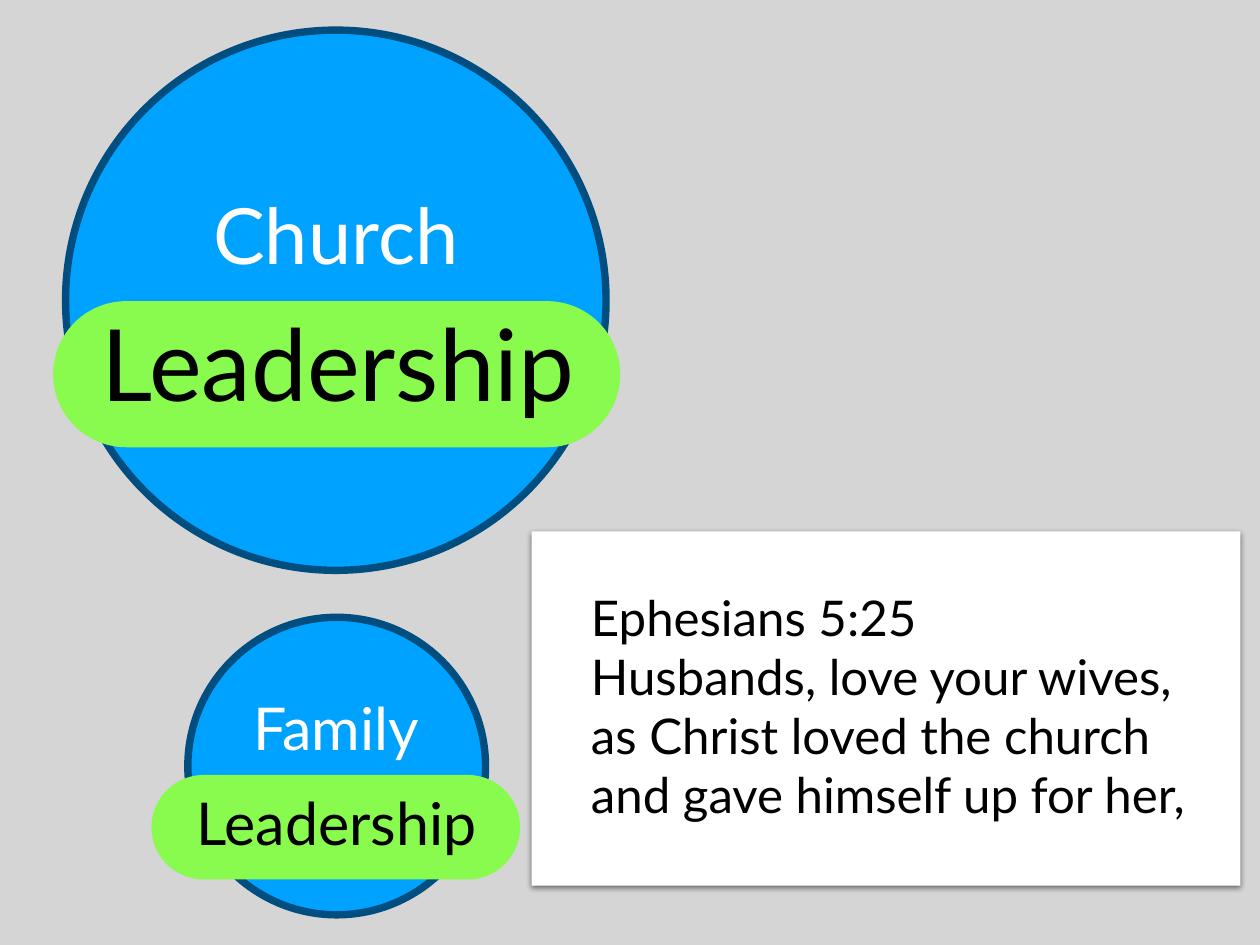
from math import cos, radians, sin

from lxml.etree import fromstring
from pptx import Presentation
from pptx.dml.color import RGBColor
from pptx.enum.shapes import MSO_SHAPE as Shape
from pptx.enum.text import MSO_ANCHOR as Anchor, MSO_AUTO_SIZE as AutoSize, PP_ALIGN as Align
from pptx.util import Inches, Pt

FONT = "Lato"
GREY, BLUE, NAVY, GREEN = "D5D5D5", "00A2FF", "004D80", "89FA4E"
WHITE, BLACK = "FFFFFF", "000000"

# Boxes are left, top, width, height in inches
CIRCLES = [(0.74, 0.34, 6.1, 6.1), (2.12, 6.97, 3.36, 3.36)]
PILLS = [(0.6, 3.4, 6.4, 1.65), (1.71, 8.75, 4.16, 1.18)]
LABELS = [
    ("Church", (2.26, 1.99, 3.06, 1.29), 63, WHITE),
    ("Family", (2.73, 7.7, 2.13, 1.01), 48, WHITE),
    ("Leadership", (0.84, 3.26, 5.95, 1.65), 81, BLACK),
    ("Leadership", (2.01, 8.78, 3.58, 1.01), 48, BLACK),
]
BUBBLE = (6.05, 5.67, 7.77, 4.58)
BUBBLE_RADIUS = 0.68
BUBBLE_TAIL = [(6.05, 9.46), (5.6, 9.27), (6.05, 9.08)]
VERSE_BOX = (6.61, 6, 6.91, 3.93)
VERSE = [
    "Ephesians 5:25",
    "Husbands, love your wives, as Christ loved the church and gave himself up for her,",
]
SHADOW = """<a:effectLst xmlns:a="http://schemas.openxmlformats.org/drawingml/2006/main">
<a:outerShdw blurRad="63500" dist="25400" dir="5400000" rotWithShape="0">
<a:srgbClr val="000000"><a:alpha val="50000"/></a:srgbClr></a:outerShdw></a:effectLst>"""


def color(value):
    return RGBColor.from_string(value)


def inches(box):
    return [Inches(length) for length in box]


def paint(shape, fill, line=None):
    shape.shadow.inherit = False
    shape.fill.solid()
    shape.fill.fore_color.rgb = color(fill)
    if line:
        shape.line.color.rgb = color(line)
        shape.line.width = Pt(6)
    else:
        shape.line.fill.background()


def add_text(page, lines, box, size, text_color, align, wrap):
    text_box = page.shapes.add_textbox(*inches(box))
    frame = text_box.text_frame
    frame.text = "\n".join(lines)
    frame.word_wrap = wrap
    frame.auto_size = AutoSize.SHAPE_TO_FIT_TEXT
    frame.vertical_anchor = Anchor.MIDDLE
    frame.margin_left = frame.margin_right = Inches(0.06)
    frame.margin_top = frame.margin_bottom = Inches(0.06)
    for para in frame.paragraphs:
        para.alignment = align
        for run in para.runs:
            run.font.name = FONT
            run.font.size = Pt(size)
            run.font.color.rgb = color(text_color)


def bubble_outline():
    """Points clockwise from the top left corner, then the tail on the left side."""
    left, top, width, height = BUBBLE
    radius = BUBBLE_RADIUS
    near_x, far_x = left + radius, left + width - radius
    near_y, far_y = top + radius, top + height - radius
    centers = [(near_x, near_y), (far_x, near_y), (far_x, far_y), (near_x, far_y)]
    points = []
    for corner, (x, y) in enumerate(centers):
        for step in range(0, 91, 5):
            angle = radians(180 + 90 * corner + step)
            points.append((x + radius * cos(angle), y + radius * sin(angle)))
    return points + BUBBLE_TAIL


def add_bubble(page):
    start, *rest = bubble_outline()
    builder = page.shapes.build_freeform(*start, scale=Inches(1))
    builder.add_line_segments(rest, close=True)
    bubble = builder.convert_to_shape()
    paint(bubble, WHITE)
    properties = bubble.element.spPr
    plain_effects = properties.find("{*}effectLst")
    properties.replace(plain_effects, fromstring(SHADOW))


def main():
    deck = Presentation()
    deck.slide_width, deck.slide_height = Inches(14.22), Inches(10.67)
    page = deck.slides.add_slide(deck.slide_layouts[6])
    page.background.fill.solid()
    page.background.fill.fore_color.rgb = color(GREY)

    for box in CIRCLES:
        paint(page.shapes.add_shape(Shape.OVAL, *inches(box)), BLUE, NAVY)
    for box in PILLS:
        pill = page.shapes.add_shape(Shape.ROUNDED_RECTANGLE, *inches(box))
        pill.adjustments[0] = 0.5
        paint(pill, GREEN)
    for label, box, size, text_color in LABELS:
        add_text(page, [label], box, size, text_color, Align.CENTER, False)
    add_bubble(page)
    add_text(page, VERSE, VERSE_BOX, 40, BLACK, Align.LEFT, True)
    deck.save("out.pptx")


if __name__ == "__main__":
    main()
